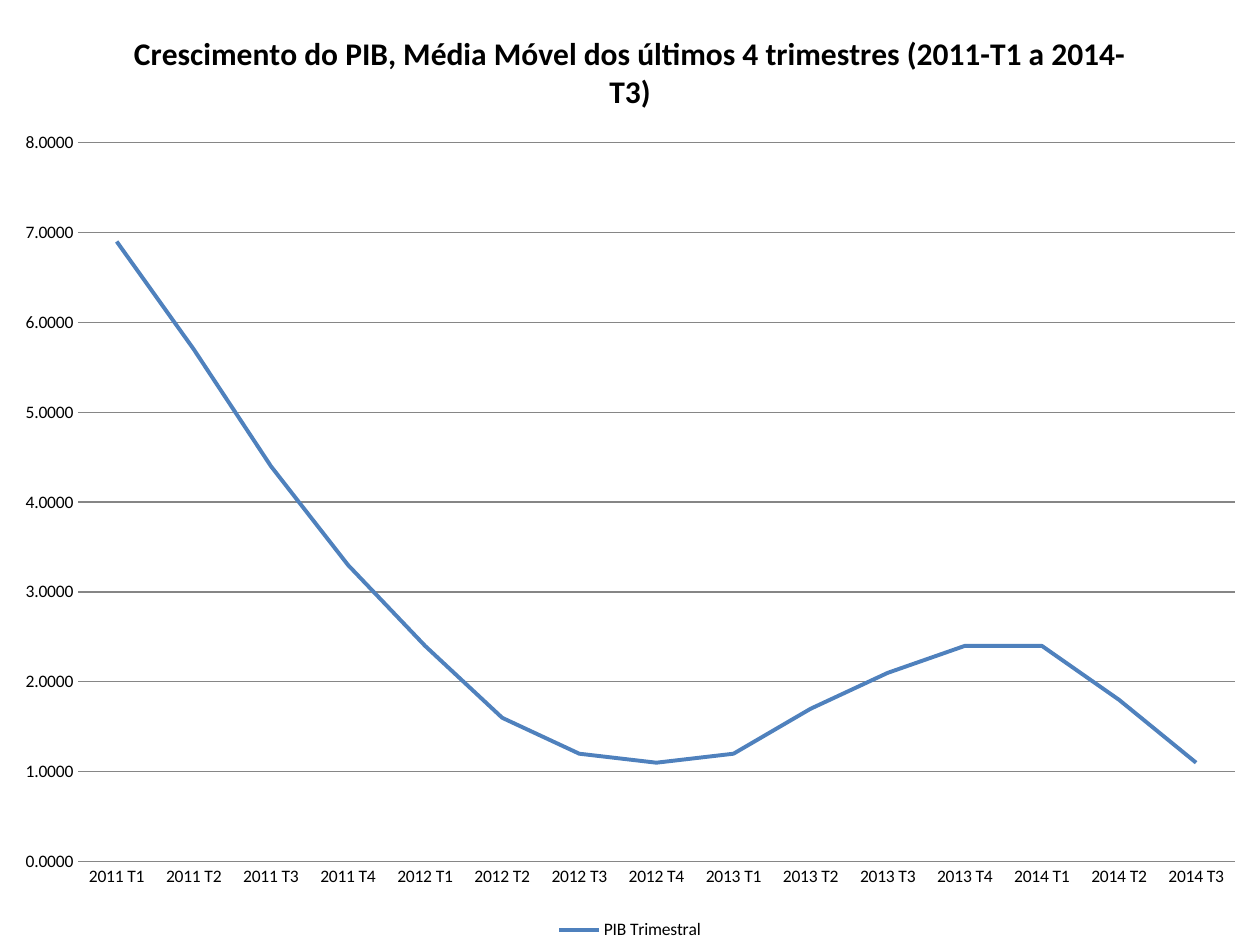
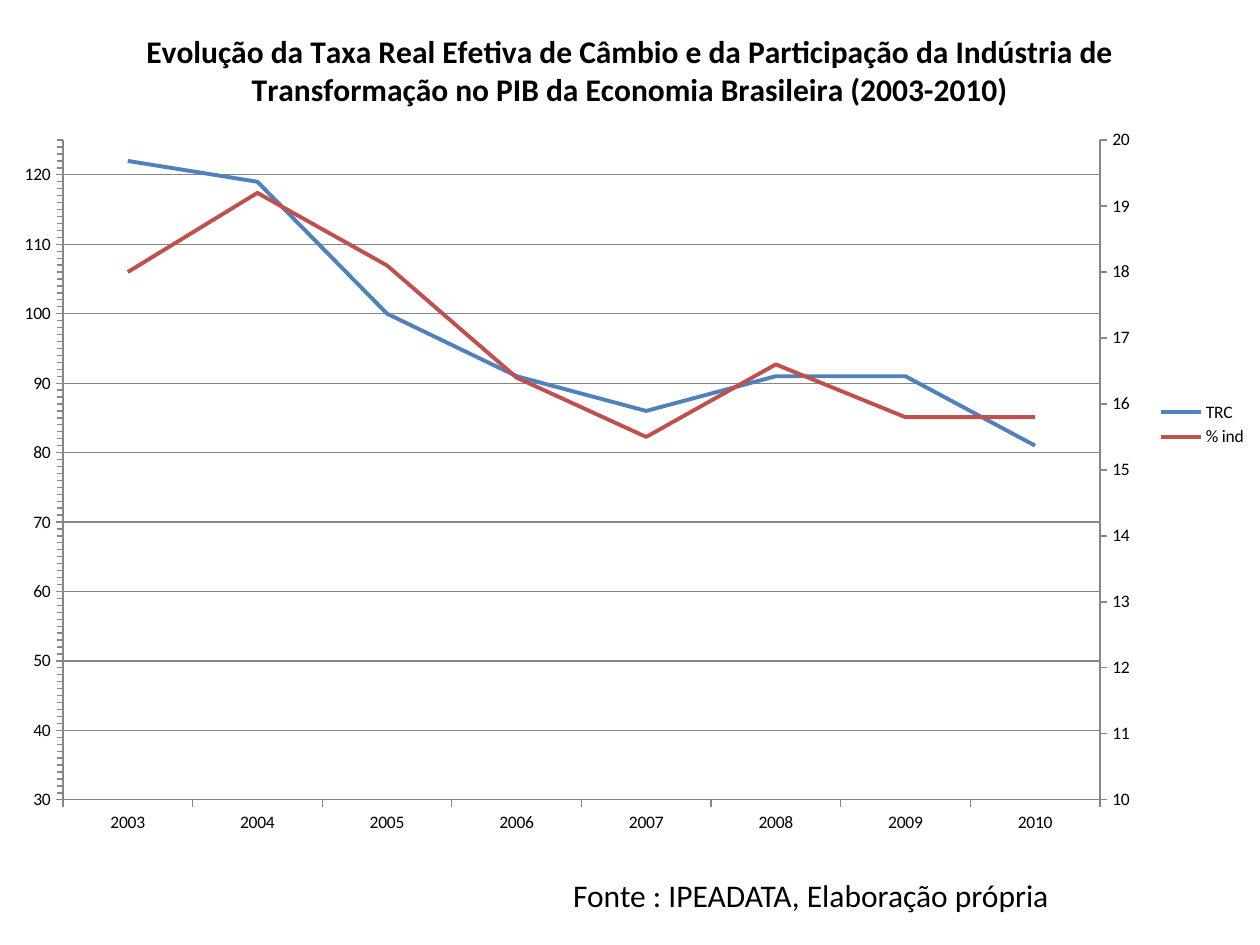
from copy import deepcopy

from lxml import etree
from pptx import Presentation
from pptx.chart.axis import CategoryAxis, ValueAxis
from pptx.chart.data import CategoryChartData
from pptx.dml.color import RGBColor
from pptx.enum.chart import XL_CHART_TYPE, XL_LEGEND_POSITION, XL_TICK_MARK
from pptx.enum.text import MSO_AUTO_SIZE
from pptx.oxml.ns import qn
from pptx.util import Pt

LINE_CHART = XL_CHART_TYPE.LINE
LEGEND_BOTTOM, LEGEND_RIGHT = XL_LEGEND_POSITION.BOTTOM, XL_LEGEND_POSITION.RIGHT
TICK_NONE, TICK_OUT = XL_TICK_MARK.NONE, XL_TICK_MARK.OUTSIDE
FONT = "Calibri"
BLACK = RGBColor(0x00, 0x00, 0x00)
GRID_GRAY = RGBColor(0x86, 0x86, 0x86)
SERIES_COLORS = [RGBColor(0x4F, 0x81, 0xBD), RGBColor(0xC0, 0x50, 0x4D)]
SLIDE_WIDTH, SLIDE_HEIGHT = 720, 540


def set_font(font, size, bold=False):
    font.name, font.size, font.bold = FONT, Pt(size), bold
    font.color.rgb = BLACK


def add_line_chart(slide, height, title, categories, series, number_format,
                   legend_position, tick_mark, plot_box):
    """Add a full-width line chart; plot_box is x, y, w, h as fractions of it."""
    data = CategoryChartData(number_format=number_format)
    data.categories = categories
    for name, values in series:
        data.add_series(name, values)
    chart = slide.shapes.add_chart(
        LINE_CHART, 0, 0, Pt(SLIDE_WIDTH), Pt(height), data).chart
    set_font(chart.font, 10)

    chart.has_title = True
    heading = chart.chart_title.text_frame
    heading.text = title
    set_font(heading.paragraphs[0].font, 18, bold=True)
    chart.chart_title.include_in_layout = False

    chart.has_legend = True
    chart.legend.position = legend_position
    chart.legend.include_in_layout = False

    chart.plots[0].vary_by_categories = False
    for line, color in zip(chart.plots[0].series, SERIES_COLORS):
        line.smooth = False
        line.format.line.color.rgb = color
        line.format.line.width = Pt(2.25)

    values_axis = chart.value_axis
    values_axis.has_major_gridlines = True
    for axis in (chart.category_axis, values_axis):
        axis.major_tick_mark = tick_mark
        axis.minor_tick_mark = TICK_NONE
    for rule in (chart.category_axis, values_axis, values_axis.major_gridlines):
        rule.format.line.color.rgb = GRID_GRAY
        rule.format.line.width = Pt(0.75)
    values_axis.tick_labels.number_format = number_format
    values_axis.tick_labels.number_format_is_linked = False

    plot_area = chart.element.find(".//" + qn("c:plotArea"))
    for automatic in plot_area.findall(qn("c:layout")):
        plot_area.remove(automatic)
    layout = etree.Element(qn("c:layout"))
    manual = etree.SubElement(layout, qn("c:manualLayout"))
    settings = [("layoutTarget", "inner"), ("xMode", "edge"), ("yMode", "edge")]
    for tag, value in settings + list(zip("xywh", plot_box)):
        etree.SubElement(manual, qn("c:" + tag)).set("val", str(value))
    plot_area.insert(0, layout)
    return chart, plot_area


prs = Presentation()
prs.slide_width, prs.slide_height = Pt(SLIDE_WIDTH), Pt(SLIDE_HEIGHT)
blank = prs.slide_layouts[6]

# Slide 1: quarterly GDP growth
growth_slide = prs.slides.add_slide(blank)
quarters = [f"{year} T{quarter}" for year in range(2011, 2015)
            for quarter in range(1, 5)][:15]
growth = [6.9, 5.7, 4.4, 3.3, 2.4, 1.6, 1.2, 1.1, 1.2, 1.7, 2.1, 2.4, 2.4, 1.8, 1.1]
growth_chart, _ = add_line_chart(
    growth_slide, SLIDE_HEIGHT,
    "Crescimento do PIB, Média Móvel dos últimos 4 trimestres (2011-T1 a 2014-T3)",
    quarters, [("PIB Trimestral", growth)], "#,##0.0000",
    LEGEND_BOTTOM, TICK_NONE, (0.062, 0.151, 0.918, 0.761))
growth_chart.value_axis.format.line.fill.background()
growth_chart.value_axis.minimum_scale = 0
growth_chart.value_axis.maximum_scale = 8
growth_chart.value_axis.major_unit = 1

# Slide 2: exchange rate on the left axis, industry share on the right
exchange_slide = prs.slides.add_slide(blank)
exchange_chart, plot_area = add_line_chart(
    exchange_slide, 485.3,
    "Evolução da Taxa Real Efetiva de Câmbio e da Participação da Indústria "
    "de Transformação no PIB da Economia Brasileira (2003-2010)",
    [str(year) for year in range(2003, 2011)],
    [("TRC", [122, 119, 100, 91, 86, 91, 91, 81]),
     ("% ind", [18, 19.2, 18.1, 16.4, 15.5, 16.6, 15.8, 15.8])],
    "General", LEGEND_RIGHT, TICK_OUT, (0.05, 0.165, 0.823, 0.777))
rate_axis = exchange_chart.value_axis
rate_axis.minimum_scale, rate_axis.maximum_scale = 30, 125
rate_axis.major_unit, rate_axis.minor_unit = 10, 1
rate_axis.minor_tick_mark = TICK_OUT

rate_lines = plot_area.find(qn("c:lineChart"))
share_lines = deepcopy(rate_lines)
rate_lines.remove(rate_lines.findall(qn("c:ser"))[1])
share_lines.remove(share_lines.findall(qn("c:ser"))[0])
rate_lines.addnext(share_lines)

left_value = plot_area.find(qn("c:valAx"))
right_value = deepcopy(left_value)
hidden_years = deepcopy(plot_area.find(qn("c:catAx")))
left_value.addnext(right_value)
right_value.addnext(hidden_years)
YEARS_ID, SHARE_ID = "50010", "50020"
for reference, axis_id in zip(share_lines.findall(qn("c:axId")), (YEARS_ID, SHARE_ID)):
    reference.set("val", axis_id)
for axis, own_id, crossed_id in ((hidden_years, YEARS_ID, SHARE_ID),
                                 (right_value, SHARE_ID, YEARS_ID)):
    axis.find(qn("c:axId")).set("val", own_id)
    axis.find(qn("c:crossAx")).set("val", crossed_id)
right_value.find(qn("c:axPos")).set("val", "r")
right_value.find(qn("c:crosses")).set("val", "max")
CategoryAxis(hidden_years).visible = False
share_axis = ValueAxis(right_value)
share_axis.has_major_gridlines = False
share_axis.minimum_scale, share_axis.maximum_scale = 10, 20
share_axis.major_unit, share_axis.minor_unit = 1, None
share_axis.minor_tick_mark = TICK_NONE

source_note = exchange_slide.shapes.add_textbox(
    Pt(320.4), Pt(496.8), Pt(351.4), Pt(28.8)).text_frame
source_note.word_wrap = True
source_note.auto_size = MSO_AUTO_SIZE.SHAPE_TO_FIT_TEXT
source_note.text = "Fonte : IPEADATA, Elaboração própria"
set_font(source_note.paragraphs[0].font, 18)

prs.save("out.pptx")
